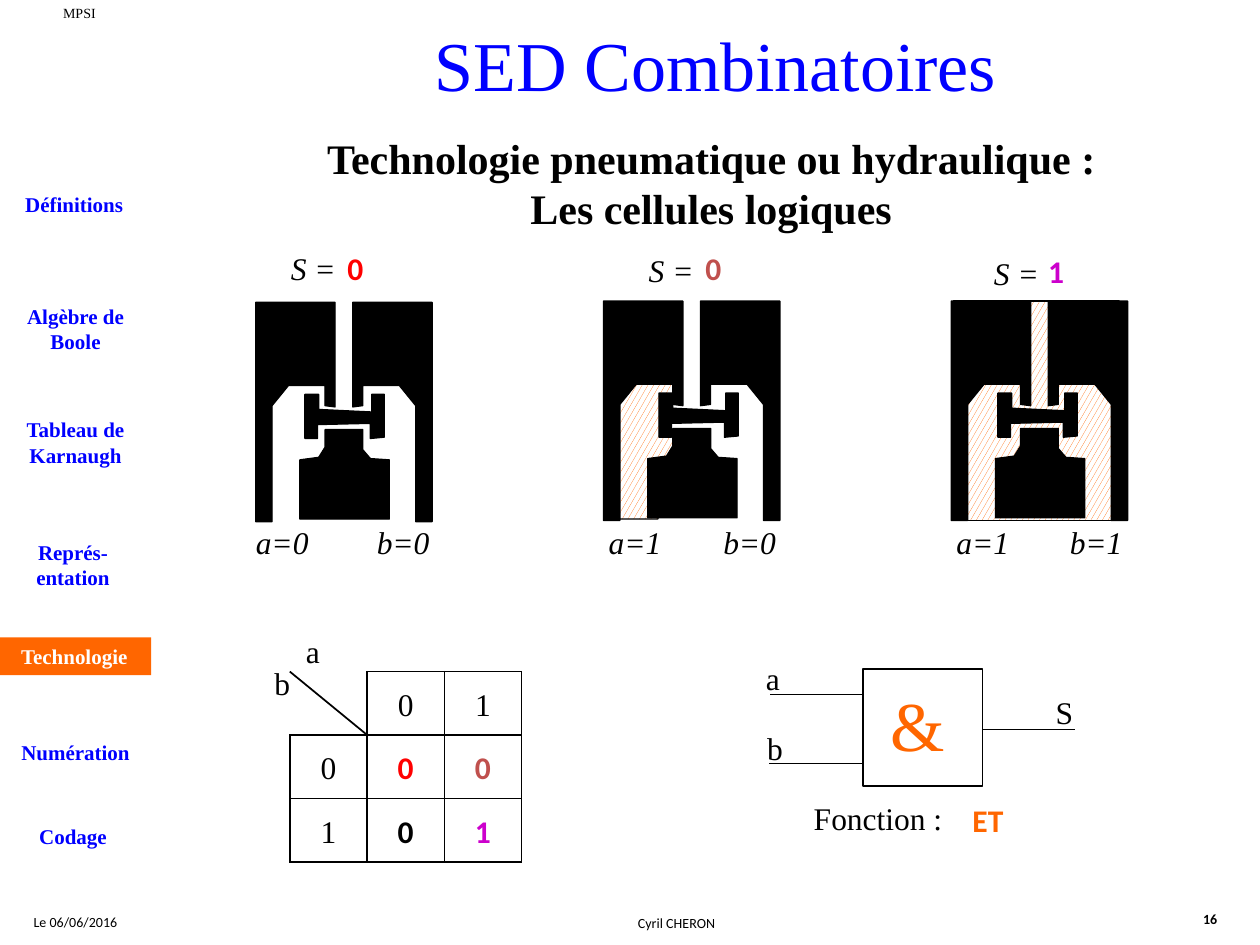
from lxml import etree
from pptx import Presentation, util as u
from pptx.dml.color import RGBColor
from pptx.enum import dml, shapes, text as t
from pptx.oxml.ns import qn

prs = Presentation()
prs.slide_width, prs.slide_height = u.Inches(10), u.Inches(7.5)
COL = prs.slide_width // 10
STEP = COL // 100
SERIF, SANS = "Times New Roman", "Calibri"
BLACK, WHITE, BLUE, ORANGE = "000000", "FFFFFF", "0000FF", "FF6600"
RED, BROWN, PURPLE = "FF0000", "C0504D", "CC00CC"
LEFT, CENTER = t.PP_ALIGN.LEFT, t.PP_ALIGN.CENTER
s = prs.slides.add_slide(prs.slide_layouts[5])


def rgb(color, value):
    color.rgb = RGBColor.from_string(value)


def write(sp, words, size=18, color=BLACK, font=SERIF, bold=False, italic=False,
          align=LEFT, wrap=True, inset=(0.1, 0.05), box=None):
    if box:
        sp.left, sp.top, sp.width, sp.height = [round(v * COL) for v in box]
    tf = sp.text_frame
    tf.text = words
    tf.word_wrap = wrap
    tf.auto_size = t.MSO_AUTO_SIZE.NONE
    tf.vertical_anchor = t.MSO_ANCHOR.TOP
    tf.margin_left = tf.margin_right = round(inset[0] * COL)
    tf.margin_top = tf.margin_bottom = round(inset[1] * COL)
    for p in tf.paragraphs:
        p.alignment = align
        for r in p.runs:
            r.font.size, r.font.name = u.Pt(size), font
            r.font.bold, r.font.italic = bold, italic
            rgb(r.font.color, color)
    return sp


write(s.shapes.title, "SED Combinatoires", 40, BLUE, align=CENTER,
      box=(2.42, 0.12, 6.52, 0.77))

small = dict(size=8, align=CENTER)
nav = dict(size=12, bold=True, align=CENTER, inset=(0.04, 0.05))
value = dict(font=SANS, bold=True, wrap=False)
label = dict(wrap=False)
texts = [
    ((0.17, 7.2, 0.86, 0.24), "Le 06/06/2016", dict(small, font=SANS, wrap=False)),
    ((1.25, 7.21, 8.24, 0.24), "Cyril CHERON", dict(small, font=SANS)),
    ((9.45, 7.18, 0.39, 0.24), "16", dict(value, size=8)),
    ((0.32, 0.04, 0.62, 0.13), "MPSI", dict(small, inset=(0, 0))),
    ((1.39, 1, 8.51, 0.91),
     "Technologie pneumatique ou hydraulique :\nLes cellules logiques",
     dict(size=24, bold=True, align=CENTER)),
    ((2.33, 4.97, 0.6, 0.4), "a", {}),
    ((2.08, 5.22, 0.6, 0.4), "b", {}),
    ((5.98, 5.18, 0.31, 0.4), "a", label),
    ((5.99, 5.74, 0.33, 0.4), "b", label),
    ((8.28, 5.45, 0.34, 0.4), "S", label),
    ((6.36, 6.29, 1.28, 0.4), "Fonction :", label),
    ((7.62, 6.31, 0.53, 0.4), "ET", dict(value, color=ORANGE)),
    ((6.97, 5.36, 0.63, 0.77), "&", dict(label, size=40, color=ORANGE)),
]
for x, y, h, words in [
    (0.01, 1.47, 0.3, "Définitions"),
    (0.02, 2.36, 0.5, "Algèbre de Boole"),
    (0.02, 3.26, 0.5, "Tableau de Karnaugh"),
    (0, 4.23, 0.5, "Représ-entation"),
    (0.02, 5.82, 0.3, "Numération"),
    (0, 6.49, 0.3, "Codage"),
]:
    texts.append(((x, y, 1.16, h), words, dict(nav, color=BLUE)))

current = s.shapes.add_shape(shapes.MSO_SHAPE.RECTANGLE, 0, 0, COL, COL)
current.shadow.inherit = False
current.fill.solid()
rgb(current.fill.fore_color, ORANGE)
current.line.fill.background()
write(current, "Technologie", color=WHITE, **nav, box=(-0.02, 5.06, 1.22, 0.3))

body = [(0.63, 0), (0, 0), (0, 1.74), (0.13, 1.74), (0.13, 0.82),
        (0.26, 0.66), (0.55, 0.66), (0.55, 0.82), (0.63, 0.83)]
mirrored = [(1.4 - x, y) for x, y in body]
seat = [(0.35, 1.25), (0.35, 1.72), (1.06, 1.72), (1.06, 1.25), (0.91, 1.24),
        (0.85, 1.17), (0.85, 1.01), (0.55, 1.01), (0.55, 1.15), (0.5, 1.23)]
valve = [(0.11, 0), (0.11, 0.12), (0.53, 0.14), (0.53, 0), (0.63, 0), (0.63, 0.34),
         (0.52, 0.35), (0.52, 0.23), (0.1, 0.24), (0.1, 0.35), (0, 0.35), (0, 0)]
flow_a = [(0.06, 1.73), (0.43, 1.73), (0.64, 1.1), (0.48, 1.02), (0.5, 0.77),
          (0.61, 0.74), (0.58, 0.56), (0.12, 0.62), (0.05, 0.82)]
flow_ab = [(0.02, 0), (1.33, 0), (1.33, 1.74), (0.02, 1.74)]

cells = [
    (2.4, 0.39, None, "0", "0", "0", RED, (2.21, 1.93), (2.66, 1.93), (2.03, 2.99)),
    (2.39, 0.44, flow_a, "1", "0", "0", BROWN, (5.05, 1.94), (5.5, 1.93), (4.83, 5.74)),
    (2.39, 0.37, flow_ab, "1", "1", "1", PURPLE, (7.79, 1.97), (8.22, 1.95), (7.59, 8.49)),
]
for i, (top, shift, flow, a, b, out, color, s_at, out_at, inputs) in enumerate(cells):
    left = 2.03 + 2.76 * i
    moved = [(x + shift, y + 0.73) for x, y in valve]
    for outline in [flow, body, seat, mirrored, moved]:
        if outline is None:
            continue
        points = [(round((left + x) * 100), round((top + y) * 100)) for x, y in outline]
        fb = s.shapes.build_freeform(*points[0], scale=STEP)
        fb.add_line_segments(points[1:], close=True)
        sp = fb.convert_to_shape()
        sp.shadow.inherit = False
        if outline is flow:
            sp.fill.patterned()
            sp.fill.pattern = dml.MSO_PATTERN.LARGE_CONFETTI
            rgb(sp.fill.fore_color, ORANGE)
            rgb(sp.fill.back_color, WHITE)
        else:
            sp.fill.solid()
            rgb(sp.fill.fore_color, BLACK)
        rgb(sp.line.color, BLACK)
        sp.line.width = u.Pt(0.75)
    texts.append(((*s_at, 1.08, 0.54), "S =", dict(italic=True)))
    texts.append(((*out_at, 0.33, 0.4), out, dict(value, color=color)))
    for x, words in zip(inputs, (f"a={a}", f"b={b}")):
        texts.append(((x, 4.15, 0.58, 0.42), words, dict(italic=True, inset=(0, 0))))

gate = s.shapes.add_shape(shapes.MSO_SHAPE.RECTANGLE, *[
    round(v * COL) for v in (6.85, 5.31, 0.95, 0.93)])
gate.shadow.inherit = False
gate.fill.background()
rgb(gate.line.color, BLACK)
gate.line.width = u.Pt(0.75)

rows = [["", "0", "1"], ["0", "0", "0"], ["1", "0", "1"]]
colors = {(1, 1): RED, (1, 2): BROWN, (2, 1): BLACK, (2, 2): PURPLE}
tb = s.shapes.add_table(3, 3, *[round(v * COL) for v in (2.3, 5.33, 1.84, 1.51)]).table
tb.first_row = tb.horz_banding = False
for i, row in enumerate(rows):
    for j, words in enumerate(row):
        cell = tb.cell(i, j)
        cell.text = words
        cell.vertical_anchor = t.MSO_ANCHOR.MIDDLE
        cell.margin_top, cell.margin_bottom = u.Inches(0.07), u.Inches(0.03)
        cell.fill.background()
        p = cell.text_frame.paragraphs[0]
        p.alignment = CENTER
        p.font.size = u.Pt(18)
        for r in p.runs:
            r.font.size = u.Pt(18)
            r.font.name = SANS if (i, j) in colors else SERIF
            r.font.bold = (i, j) in colors
            rgb(r.font.color, colors.get((i, j), BLACK))
        tcPr = cell._tc.get_or_add_tcPr()
        for k, side in enumerate(["lnL", "lnR", "lnT", "lnB"]):
            ln = etree.Element(qn("a:" + side), w=str(u.Pt(1)))
            if i == j == 0 and side in ("lnL", "lnT"):
                etree.SubElement(ln, qn("a:noFill"))
            else:
                fill = etree.SubElement(ln, qn("a:solidFill"))
                etree.SubElement(fill, qn("a:srgbClr"), val=BLACK)
            tcPr.insert(k, ln)

for x1, y1, x2, y2, width in [
    (2.3, 5.33, 2.91, 5.83, 1),
    (6.85, 5.51, 6.11, 5.51, 0.75),
    (6.85, 6.06, 6.1, 6.06, 0.75),
    (8.53, 5.79, 7.8, 5.79, 0.75),
]:
    cn = s.shapes.add_connector(shapes.MSO_CONNECTOR.STRAIGHT, *[
        round(v * COL) for v in (x1, y1, x2, y2)])
    rgb(cn.line.color, BLACK)
    cn.line.width = u.Pt(width)
    etree.SubElement(cn._element.spPr, qn("a:effectLst"))

for box, words, style in texts:
    write(s.shapes.add_textbox(0, 0, COL, COL), words, box=box, **style)

prs.save("out.pptx")
